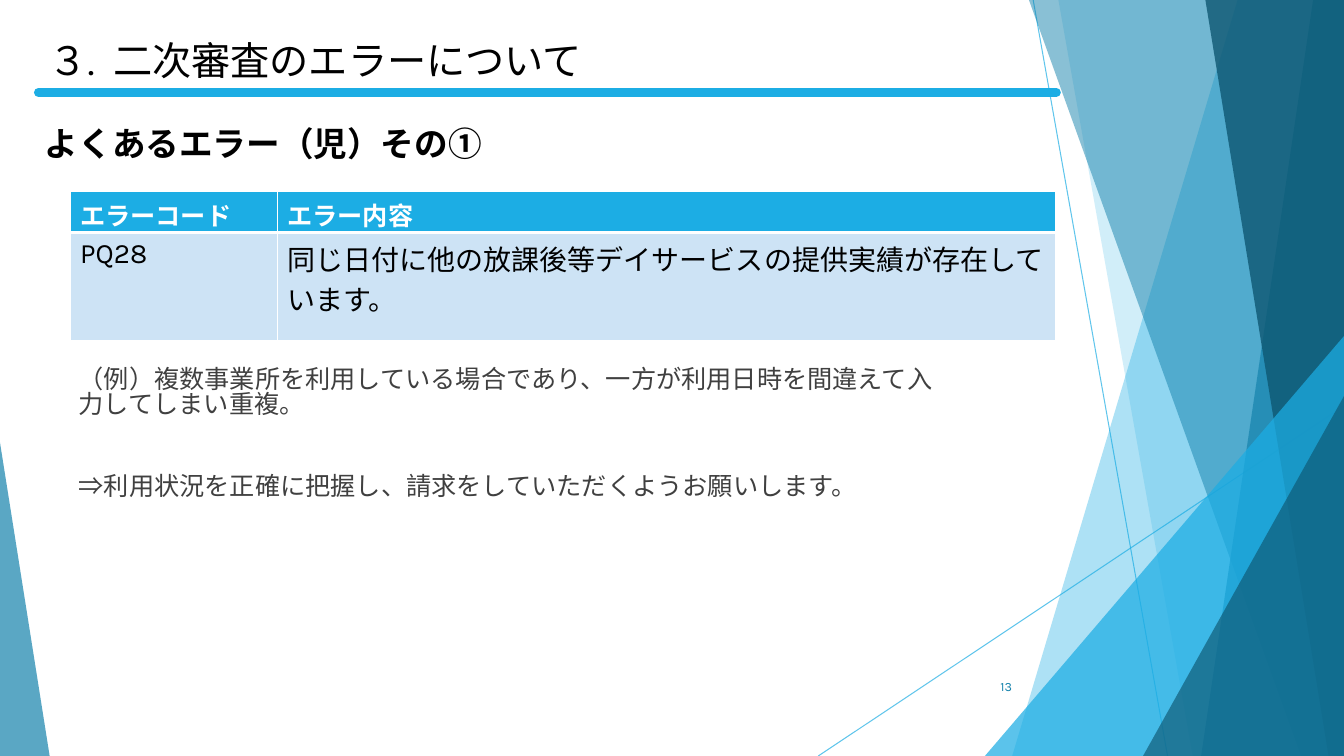
from pptx import Presentation
from pptx.dml.color import RGBColor
from pptx.enum.shapes import MSO_CONNECTOR, MSO_SHAPE
from pptx.enum.text import MSO_ANCHOR, MSO_AUTO_SIZE, PP_ALIGN
from pptx.oxml.ns import qn
from pptx.util import Pt
from lxml.etree import SubElement

WIDE, HIGH = 960, 540
SKY, BLUE, DEEP = "1CADE4", "1482AC", "0E5772"
WHITE, BLACK, GREY, PALE = "FFFFFF", "000000", "404040", "CDE3F5"

# Font formats: attributes of a font, with the colour as hex
TITLE = {"name": "Karla", "size": Pt(28), "bold": False, "color": BLACK}
HEAD = {"name": "Karla", "size": Pt(24), "bold": True, "color": BLACK}
BODY = {"name": "Arial", "size": Pt(18), "color": GREY}
PAGE = {"name": "Karla", "size": Pt(9), "color": BLUE}
TOP = {"name": "Karla", "size": Pt(18), "bold": True, "color": WHITE}
CODE = {"name": "Karla", "size": Pt(20), "bold": False, "color": BLACK}
NOTE = CODE | {"name": "Arial"}

# Bands: top left x, top right x, bottom right x, bottom left x, colour, opacity
BANDS = [
    (884, WIDE, WIDE, 723, SKY, 36),
    (756, WIDE, WIDE, 852, SKY, 20),
    (735, WIDE, WIDE, 929.5, BLUE, 50),
    (938, WIDE, WIDE, 858, BLUE, 70),
    (861, WIDE, WIDE, 949, DEEP, 80),
]
# Corners: left, top, width, apex, colour, opacity
CORNERS = [
    (703.5, 240, 256.5, 1, SKY, 72),
    (816.5, 283, 143.5, 1, DEEP, 66),
    (0, 316, 35.5, 0, BLUE, 70),
]


def tint(fmt, hue, alpha=100):
    """Give a fill or line fill a solid colour and an opacity."""
    fmt.solid()
    fmt.fore_color.rgb = RGBColor.from_string(hue)
    if alpha < 100:
        node = next(fmt.fore_color._xFill.iter(qn("a:srgbClr")))
        SubElement(node, qn("a:alpha"), val=str(alpha * 1000))


def style(font, form):
    for key, val in form.items():
        if key == "color":
            font.color.rgb = RGBColor.from_string(val)
        else:
            setattr(font, key, val)


def place(shape, *box):
    for key, val in zip(("left", "top", "width", "height"), box):
        setattr(shape, key, Pt(val))


def write(frame, lines, form, **rules):
    """Fill a text frame, one paragraph for each line."""
    frame.word_wrap = True
    frame.auto_size = MSO_AUTO_SIZE.NONE
    for i, text in enumerate(lines):
        para = frame.paragraphs[0] if i == 0 else frame.add_paragraph()
        prop = para._p.get_or_add_pPr()
        prop.set("marL", "0")
        prop.set("indent", "0")
        SubElement(prop, qn("a:buNone"))
        para.space_before = Pt(0)
        for key, val in rules.items():
            setattr(para, key, val)
        para.add_run().text = text
        style(para.runs[0].font, form)


def label(slide, box, text, form, **rules):
    shape = slide.shapes.add_textbox(*map(Pt, box))
    write(shape.text_frame, [text], form, **rules)
    return shape.text_frame


def rule(slide, ends, width, alpha=100, cap="flat"):
    line = slide.shapes.add_connector(MSO_CONNECTOR.STRAIGHT, *map(Pt, ends))
    line.line.width = Pt(width)
    tint(line.line.fill, SKY, alpha)
    line.line._ln.set("cap", cap)
    SubElement(line._element.spPr, qn("a:effectLst"))


def paint(shape, hue, alpha):
    shape.shadow.inherit = False
    shape.line.fill.background()
    tint(shape.fill, hue, alpha)


def band(slide, left, right, end, start, hue, alpha):
    pen = slide.shapes.build_freeform(Pt(left), 0)
    pen.add_line_segments(
        [(Pt(right), 0), (Pt(end), Pt(HIGH)), (Pt(start), Pt(HIGH))])
    paint(pen.convert_to_shape(), hue, alpha)


def corner(slide, left, top, width, apex, hue, alpha):
    shape = slide.shapes.add_shape(
        MSO_SHAPE.ISOSCELES_TRIANGLE,
        *map(Pt, (left, top, width, HIGH - top)))
    shape.adjustments[0] = apex
    paint(shape, hue, alpha)


def border(cell, sides):
    """Draw white cell edges from a dict of side and width."""
    prop = cell._tc.get_or_add_tcPr()
    for spot, (side, width) in enumerate(sides.items()):
        line = prop.makeelement(qn(f"a:ln{side}"), {"w": str(Pt(width))})
        solid = SubElement(line, qn("a:solidFill"))
        SubElement(solid, qn("a:srgbClr"), val=WHITE)
        prop.insert(spot, line)


def grid(slide, box, cols, rows, cells):
    table = slide.shapes.add_table(len(rows), len(cols), *map(Pt, box)).table
    for col, width in zip(table.columns, cols):
        col.width = Pt(width)
    for row, high in zip(table.rows, rows):
        row.height = Pt(high)
    for r, line in enumerate(cells):
        for c, (text, form) in enumerate(line):
            cell = table.cell(r, c)
            if r == 0:
                cell.margin_bottom = Pt(0)
            tint(cell.fill, PALE if r else SKY)
            border(cell, {"L": 1, "R": 1, "T": 1 if r == 0 else 3,
                          "B": 1 if r else 3})
            para = cell.text_frame.paragraphs[0]
            para.add_run().text = text
            style(para.runs[0].font, form)


def main():
    deck = Presentation()
    deck.slide_width, deck.slide_height = Pt(WIDE), Pt(HIGH)
    slide = deck.slides.add_slide(deck.slide_layouts[1])
    title, body = slide.placeholders

    # Backdrop
    rule(slide, (738, 0, 834, HIGH), 0.75, 70)
    rule(slide, (WIDE, 290, 584.5, HIGH), 0.75, 70)
    for item in BANDS:
        band(slide, *item)
    for item in CORNERS:
        corner(slide, *item)

    # Title and headings
    place(title, 27.5, 22, 677.5, 41)
    title.text_frame.vertical_anchor = MSO_ANCHOR.TOP
    write(title.text_frame, ["３.  二次審査のエラーについて"], TITLE,
          alignment=PP_ALIGN.LEFT)
    rule(slide, (27.5, 66, 754.5, 66), 6.5, cap="rnd")
    label(slide, (25, 84, 742, 36), "よくあるエラー（児）その①", HEAD)

    # Error table
    grid(slide, (50, 136.5, 704, 105), (148, 556), (28, 77), [
        [("エラーコード", TOP), ("エラー内容", TOP)],
        [("PQ28", CODE),
         ("同じ日付に他の放課後等デイサービスの提供実績が存在しています。", NOTE)],
    ])

    # Example and advice
    place(body, 49, 259, 639, 149)
    write(body.text_frame, [
        "（例）複数事業所を利用している場合であり、一方が利用日時を間違えて入力してしまい重複。",
        "⇒利用状況を正確に把握し、請求をしていただくようお願いします。",
    ], BODY, line_spacing=0.85)
    body.text_frame.paragraphs[1].space_before = Pt(40)

    # Page number
    page = label(slide, (676, 476, 54, 29), "13", PAGE,
                 alignment=PP_ALIGN.RIGHT)
    page.vertical_anchor = MSO_ANCHOR.MIDDLE

    deck.save("out.pptx")


if __name__ == "__main__":
    main()
